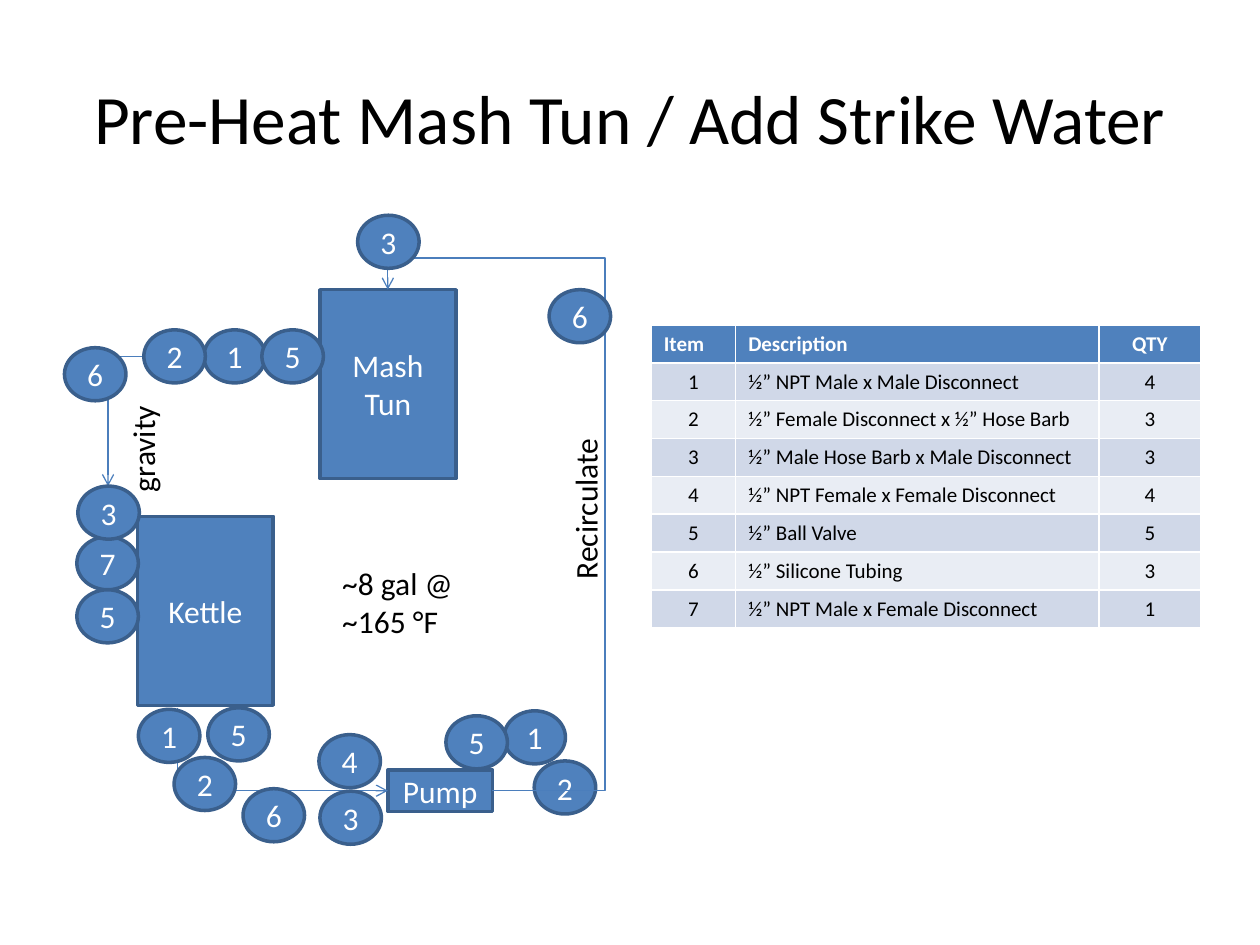
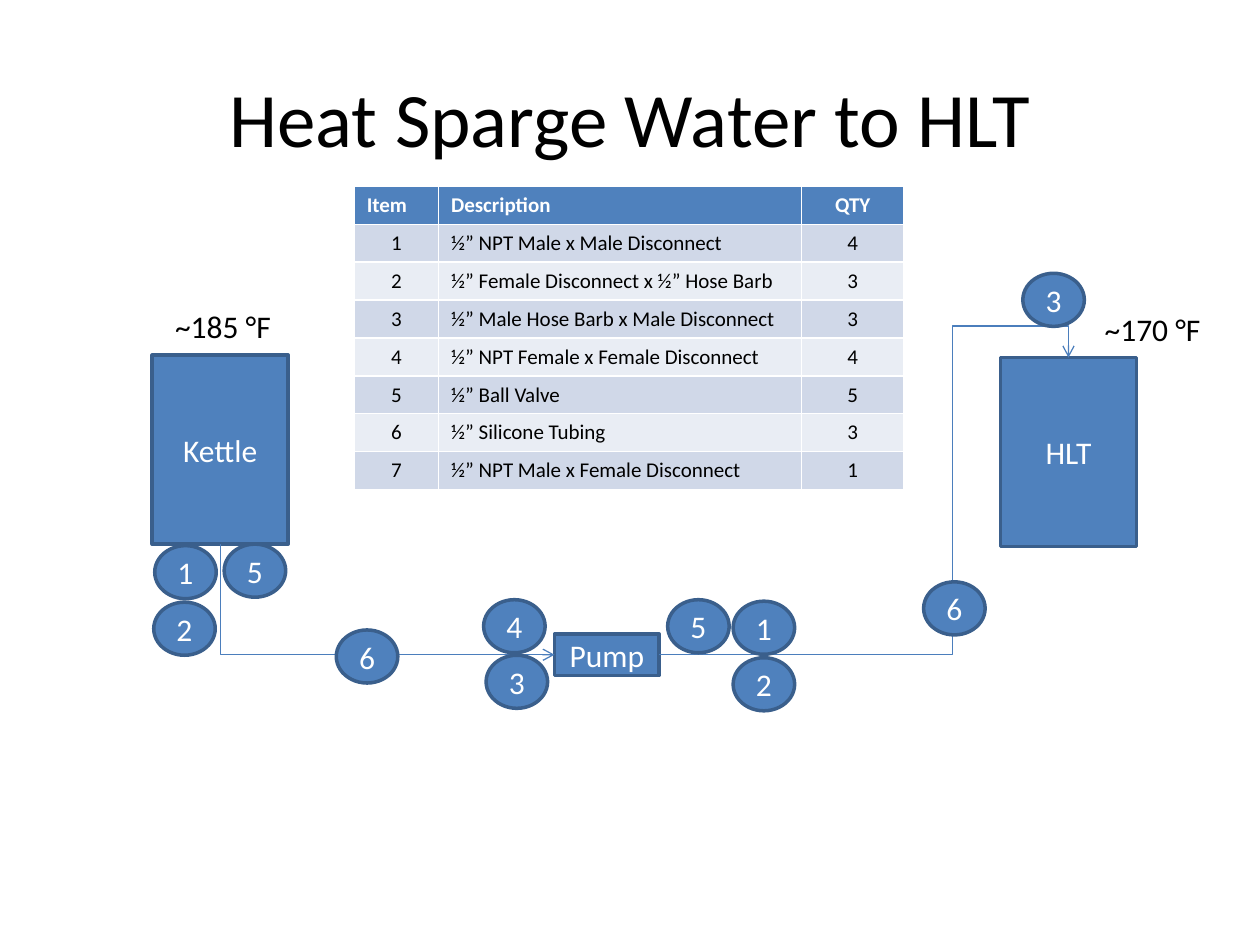
from lxml import etree
from pptx import Presentation
from pptx import util as u
from pptx.dml.color import RGBColor
from pptx.enum import shapes, text
from pptx.oxml import ns

FONT = "Calibri"
BLUE, EDGE, PIPE = "4F81BD", "3A5F8C", "4B7EBC"
BANDS = ("D0D8E8", "E9EDF4")
WHITE, BLACK = "FFFFFF", "000000"
CENTER = text.PP_ALIGN.CENTER
MIDDLE = text.MSO_ANCHOR.MIDDLE
TANK, PUMP, FITTING = (2.74, 3.81), (2.11, 0.84), (1.24, 1.07)
TOP, LEFT, BOTTOM, RIGHT = range(4)
COLUMN_WIDTHS, ROW_HEIGHT = (1.7, 7.32, 2.06), 0.76
PARTS = [
    ("Item", "Description", "QTY"),
    ("1", "½” NPT Male x Male Disconnect", "4"),
    ("2", "½” Female Disconnect x ½” Hose Barb", "3"),
    ("3", "½” Male Hose Barb x Male Disconnect", "3"),
    ("4", "½” NPT Female x Female Disconnect", "4"),
    ("5", "½” Ball Valve", "5"),
    ("6", "½” Silicone Tubing", "3"),
    ("7", "½” NPT Male x Female Disconnect", "1"),
]

MASH_TUN = {
    "title": ("Pre-Heat Mash Tun / Add Strike Water", 39.6),
    "origin": (1.3, 4.3),
    "vessels": [("Kettle", 1.47, 6.11, TANK), ("Mash Tun", 5.15, 1.54, TANK),
                ("Pump", 6.52, 11.22, PUMP)],
    "feed": ((2.28, 9.97), ("Pump", LEFT)),
    "fittings_below": [("1", 1.49, 10), ("1", 2.81, 2.35), ("2", 2.21, 10.97),
                       ("2", 9.47, 11.04), ("3", 5.15, 11.65), ("4", 5.13, 10.51)],
    "delivery": (("Pump", RIGHT), ("Mash Tun", TOP), (-1.074, 1.063)),
    "drain": ((1.6, 2.89), (0.88, 5.5)),
    "fittings_above": [("3", 5.91, 0.04), ("1", 8.86, 10.03), ("5", 7.69, 10.13),
                       ("5", 2.89, 9.97), ("5", 3.98, 2.35), ("6", 9.77, 1.54),
                       ("6", 3.6, 11.6), ("6", 0, 2.71), ("7", 0.25, 6.52),
                       ("5", 0.25, 7.59), ("3", 0.27, 5.5), ("2", 1.6, 2.35)],
    "labels": [("~8 gal @ ~165 °F", (5.35, 6.95, 3.07, 1.8), 0),
               ("gravity", (0.45, 4.23, 2.26, 1.02), 270),
               ("Recirculate", (8.81, 5.43, 3.38, 1.02), 270)],
    "table": (13.13, 6.55),
}
SPARGE = {
    "title": ("Heat Sparge Water to HLT", 44),
    "origin": (3, 5.5),
    "vessels": [("Kettle", 0.07, 1.66, TANK), ("HLT", 17.17, 1.71, TANK),
                ("Pump", 8.18, 7.28, PUMP)],
    "feed": (("Kettle", BOTTOM), ("Pump", LEFT)),
    "fittings_below": [("1", 0.12, 5.5), ("2", 0.1, 6.64), ("2", 11.78, 7.76),
                       ("3", 6.8, 7.71), ("4", 6.75, 6.59)],
    "delivery": (("Pump", RIGHT), ("HLT", TOP), (0.716, 1.106)),
    "drain": None,
    "fittings_above": [("3", 17.62, 0.01), ("1", 11.78, 6.62), ("5", 10.46, 6.59),
                       ("5", 1.52, 5.47), ("6", 3.78, 7.2), ("6", 15.62, 6.23)],
    "labels": [("~185 °F", (0.28, 0.57, 2.67, 1.02), 0),
               ("~170 °F", (19.02, 0.62, 2.67, 1.02), 0)],
    "table": (7.14, 3.76),
}


def rgb(value):
    """Turn a hex string into a colour."""
    return RGBColor.from_string(value)


def set_all(target, values):
    """Set each attribute of the target from a dict."""
    for name, value in values.items():
        setattr(target, name, value)


def write(frame, words, size, color, align=None, bold=False):
    """Write one formatted paragraph in a text frame."""
    paragraph = frame.paragraphs[0]
    paragraph.alignment = align
    run = paragraph.add_run()
    run.text = words
    set_all(run.font, {"name": FONT, "size": u.Pt(size), "bold": bold})
    run.font.color.rgb = rgb(color)


def add_text(slide, words, box, size, align=None, rotation=0, **frame_format):
    """Add a text box in a box given in centimetres."""
    shape = slide.shapes.add_textbox(*map(u.Cm, box))
    shape.rotation = rotation
    set_all(shape.text_frame, {"word_wrap": True, **frame_format})
    write(shape.text_frame, words, size, BLACK, align)


def add_part(slide, kind, words, origin, x, y, size):
    """Add a labelled vessel or fitting relative to the origin."""
    box = (origin[0] + x, origin[1] + y, *size)
    shape = slide.shapes.add_shape(kind, *map(u.Cm, box))
    shape.shadow.inherit = False
    shape.fill.solid()
    shape.fill.fore_color.rgb = rgb(BLUE)
    shape.line.color.rgb = rgb(EDGE)
    shape.line.width = u.Pt(2)
    set_all(shape.text_frame, {"word_wrap": True, "vertical_anchor": MIDDLE})
    write(shape.text_frame, words, 18, WHITE, CENTER)
    return shape


def add_fittings(slide, origin, fittings):
    """Add the numbered fittings."""
    for number, x, y in fittings:
        add_part(slide, shapes.MSO_SHAPE.OVAL, number, origin, x, y, FITTING)


def turn_down_first(pipe):
    """Turn a pipe so that it leaves vertically."""
    width, height = pipe.width, pipe.height
    shift = (width - height) // 2
    set_all(pipe, {"left": pipe.left + shift, "top": pipe.top - shift,
                   "width": height, "height": width})
    for name, value in {"rot": "16200000", "flipH": "1"}.items():
        pipe.element.spPr.xfrm.set(name, value)


def add_pipe(slide, origin, vessels, start, end, bends=()):
    """Add a bent arrow between points or vessel sides."""
    points = [(0, 0) if spot[0] in vessels else
              (origin[0] + spot[0], origin[1] + spot[1]) for spot in (start, end)]
    pipe = slide.shapes.add_connector(
        shapes.MSO_CONNECTOR.ELBOW, *(u.Cm(value) for point in points for value in point))
    for spot, connect in ((start, pipe.begin_connect), (end, pipe.end_connect)):
        if spot[0] in vessels:
            connect(vessels[spot[0]], spot[1])
    pipe.line.color.rgb = rgb(PIPE)
    pipe.line.width = u.Pt(0.75)
    properties = pipe.element.spPr
    geometry = properties.find(ns.qn("a:prstGeom"))
    geometry.set("prst", "bentConnector4" if bends else "bentConnector2")
    guides = geometry.find(ns.qn("a:avLst"))
    for index, bend in enumerate(bends, 1):
        etree.SubElement(guides, ns.qn("a:gd"), name=f"adj{index}",
                         fmla=f"val {round(bend * 100000)}")
    line = properties.find(ns.qn("a:ln"))
    etree.SubElement(line, ns.qn("a:tailEnd"), type="arrow")
    etree.SubElement(properties, ns.qn("a:effectLst"))
    return pipe


def add_diagram(slide, plan):
    """Draw the vessels, pipes, fittings and labels of a plan."""
    origin = plan["origin"]
    vessels = {name: add_part(slide, shapes.MSO_SHAPE.RECTANGLE, name, origin, x, y, size)
               for name, x, y, size in plan["vessels"]}
    turn_down_first(add_pipe(slide, origin, vessels, *plan["feed"]))
    add_fittings(slide, origin, plan["fittings_below"])
    for route in filter(None, (plan["delivery"], plan["drain"])):
        add_pipe(slide, origin, vessels, *route)
    add_fittings(slide, origin, plan["fittings_above"])
    for words, (x, y, width, height), rotation in plan["labels"]:
        add_text(slide, words, (origin[0] + x, origin[1] + y, width, height), 18,
                 rotation=rotation, word_wrap=not rotation,
                 auto_size=text.MSO_AUTO_SIZE.SHAPE_TO_FIT_TEXT)


def add_parts_table(slide, left, top):
    """Add the parts list with its top left corner at a point."""
    box = (left, top, sum(COLUMN_WIDTHS), ROW_HEIGHT * len(PARTS))
    table = slide.shapes.add_table(len(PARTS), len(COLUMN_WIDTHS), *map(u.Cm, box)).table
    for column, width in zip(table.columns, COLUMN_WIDTHS):
        column.width = u.Cm(width)
    for row, values in enumerate(PARTS):
        table.rows[row].height = u.Cm(ROW_HEIGHT)
        header = row == 0
        for column, words in enumerate(values):
            cell = table.cell(row, column)
            cell.fill.solid()
            cell.fill.fore_color.rgb = rgb(BLUE if header else BANDS[(row - 1) % 2])
            centered = column == 2 or (column == 0 and not header)
            write(cell.text_frame, words, 12, WHITE if header else BLACK,
                  CENTER if centered else None, header)


def add_plan_slide(presentation, plan):
    """Add a slide with a title, a piping diagram and the parts list."""
    slide = presentation.slides.add_slide(presentation.slide_layouts[6])
    words, size = plan["title"]
    add_text(slide, words, (1.27, 0.76, 22.86, 3.18), size, CENTER, vertical_anchor=MIDDLE)
    add_diagram(slide, plan)
    add_parts_table(slide, *plan["table"])


def main():
    """Build and save the presentation."""
    presentation = Presentation()
    set_all(presentation, {"slide_width": u.Cm(25.4), "slide_height": u.Cm(19.05)})
    for plan in (MASH_TUN, SPARGE):
        add_plan_slide(presentation, plan)
    presentation.save("out.pptx")


if __name__ == "__main__":
    main()
